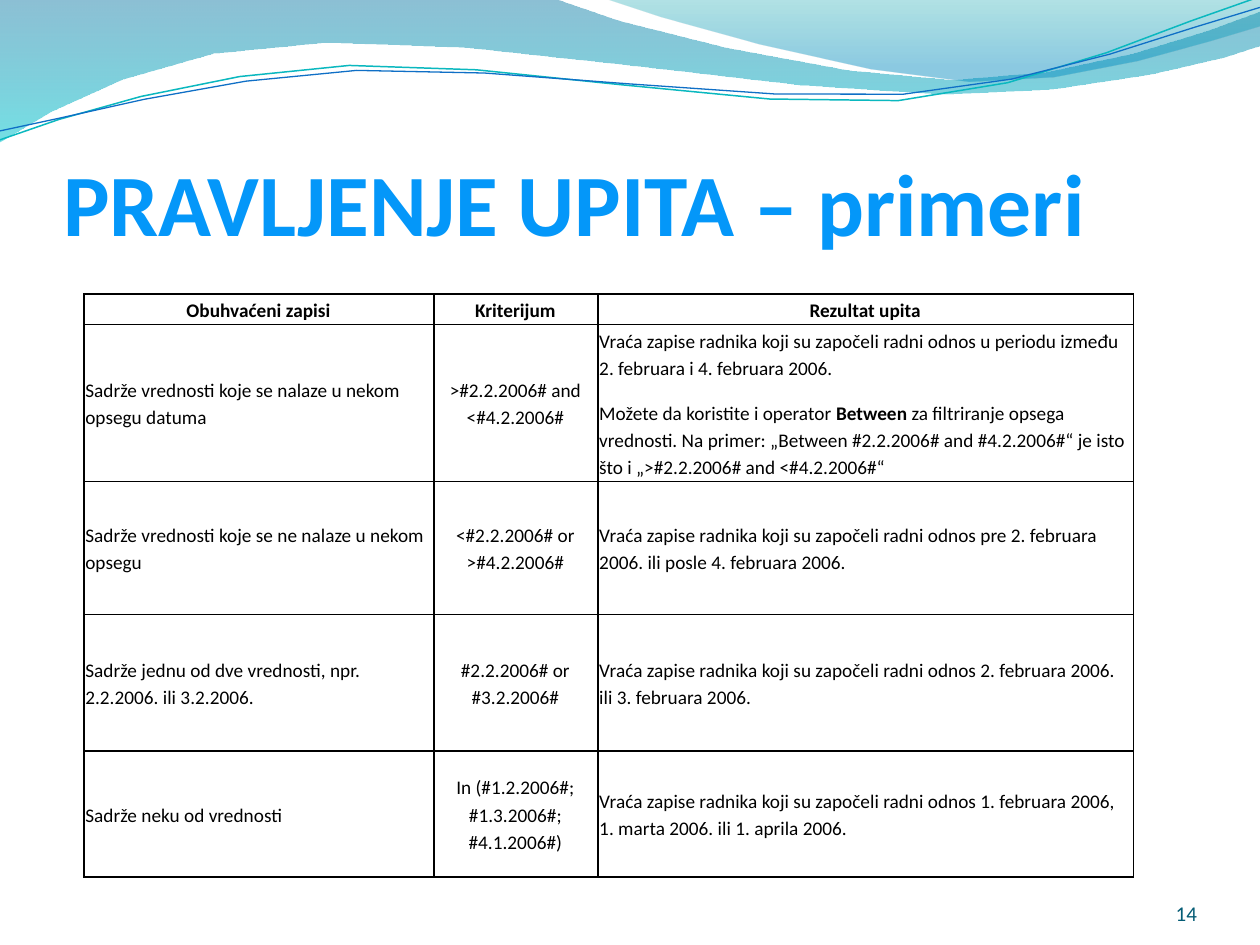
from dataclasses import dataclass

from lxml import etree
from pptx import Presentation
from pptx import util as u
from pptx.dml.color import RGBColor
from pptx.enum import text
from pptx.oxml.ns import qn


@dataclass(frozen=True)
class Theme:
    font: str = "Calibri"
    title_size: float = 50
    cell_size: float = 11
    number_size: float = 12
    title: str = "0497F9"
    body: str = "000000"
    number: str = "045C75"
    teal_line: str = "0AB8BF"
    blue_line: str = "0F6FC6"
    # Gradient stops: position, colour, opacity in percent
    wide_wave: tuple = ((0, "0074A1", 45), (1, "00C6CF", 55))
    right_wave: tuple = ((0, "00A1A9", 30), (0.8, "008BBF", 45))


LEFT, CENTER, RIGHT = text.PP_ALIGN.LEFT, text.PP_ALIGN.CENTER, text.PP_ALIGN.RIGHT

# Outlines in cm: one point is a straight edge, three points are a Bézier curve
WIDE_WAVE = [
    [(-0.03, -0.03)], [(11.18, -0.03)],
    [(12.09, 0.43), (16.87, 1.6), (19.25, 1.6)],
    [(21.67, 1.6), (24.33, 0.66), (25.4, 0.23)],
    [(25.43, 0.91)],
    [(24.97, 1.12), (22.1, 1.93), (18.95, 1.9)],
    [(15.8, 1.9), (9.7, 0.71), (6.53, 0.86)],
    [(3.28, 0.89), (1.17, 2.11), (-0.03, 2.87)],
]
RIGHT_WAVE = [
    [(12.17, -0.03)],
    [(12.93, 0.28), (17.32, 1.57), (19.53, 1.65)],
    [(21.74, 1.75), (24.41, 0.81), (25.4, 0.53)],
    [(25.4, -0.03)],
]
TEAL_CURVE = [
    [(0, 2.82)],
    [(1.22, 2.36), (4.01, 1.45), (7.04, 1.32)],
    [(10.03, 1.19), (15.06, 2.26), (18.11, 2.03)],
    [(21.16, 1.8), (23.83, 0.38), (25.35, -0.05)],
]
BLUE_CURVE = [
    [(0, 2.64)],
    [(1.19, 2.44), (4.17, 1.55), (7.19, 1.42)],
    [(10.24, 1.3), (15.16, 2.11), (18.21, 1.9)],
    [(21.23, 1.7), (23.9, 0.53), (25.4, 0.15)],
]

COLUMN_WIDTHS = [7.06, 3.3, 10.8]
ROW_HEIGHTS = [0.48, 3.07, 2.68, 2.75, 2.54]
# Paragraphs are split at line ends; ** switches bold
QUERY_ROWS = [
    ("Obuhvaćeni zapisi", "Kriterijum", "Rezultat upita"),
    ("Sadrže vrednosti koje se nalaze u nekom opsegu datuma",
     ">#2.2.2006# and <#4.2.2006#",
     "Vraća zapise radnika koji su započeli radni odnos u periodu između "
     "2. februara i 4. februara 2006.\n"
     "Možete da koristite i operator **Between** za filtriranje opsega vrednosti. "
     "Na primer: „Between #2.2.2006# and #4.2.2006#“ je isto što i "
     "„>#2.2.2006# and <#4.2.2006#“"),
    ("Sadrže vrednosti koje se ne nalaze u nekom opsegu",
     "<#2.2.2006# or >#4.2.2006#",
     "Vraća zapise radnika koji su započeli radni odnos pre 2. februara 2006. "
     "ili posle 4. februara 2006."),
    ("Sadrže jednu od dve vrednosti, npr. 2.2.2006. ili 3.2.2006.",
     "#2.2.2006# or #3.2.2006#",
     "Vraća zapise radnika koji su započeli radni odnos 2. februara 2006. "
     "ili 3. februara 2006."),
    ("Sadrže neku od vrednosti",
     "In (#1.2.2006#; #1.3.2006#; #4.1.2006#)",
     "Vraća zapise radnika koji su započeli radni odnos 1. februara 2006, "
     "1. marta 2006. ili 1. aprila 2006."),
]


def write(frame, content, *, font, size, color, bold=False, align=LEFT,
          line_spacing=None, space_after=0):
    """Fill a text frame with formatted paragraphs."""
    lines = content.split("\n")
    for index, line in enumerate(lines):
        paragraph = frame.paragraphs[0] if index == 0 else frame.add_paragraph()
        paragraph.alignment = align
        paragraph.line_spacing = line_spacing
        paragraph.space_before = u.Pt(0)
        is_extra = index > 0 and index == len(lines) - 1
        paragraph.space_after = u.Pt(0 if is_extra else space_after)
        for part, words in enumerate(line.split("**")):
            run = paragraph.add_run()
            run.text = words
            run.font.name, run.font.size = font, u.Pt(size)
            run.font.bold = bold or part % 2 == 1
            run.font.color.rgb = RGBColor.from_string(color)


def trace(outline, steps=4):
    """Turn an outline into points, sampling its curves."""
    points = []
    for segment in outline:
        if len(segment) == 1:
            points += segment
            continue
        controls = [points[-1], *segment]
        for step in range(1, steps + 1):
            t = step / steps
            weights = ((1 - t) ** 3, 3 * t * (1 - t) ** 2, 3 * t * t * (1 - t), t ** 3)
            points.append(tuple(sum(w * point[axis] for w, point in zip(weights, controls))
                                for axis in (0, 1)))
    return [(u.Cm(x), u.Cm(y)) for x, y in points]


class SlideBuilder:
    def __init__(self, slide, theme):
        self.slide, self.theme = slide, theme

    def outline(self, outline, close):
        start, *points = trace(outline)
        builder = self.slide.shapes.build_freeform(*start)
        builder.add_line_segments(points, close=close)
        shape = builder.convert_to_shape()
        shape.shadow.inherit = False
        return shape

    def wave(self, outline, stops):
        shape = self.outline(outline, close=True)
        shape.line.fill.background()
        shape.fill.gradient()
        shape.fill.gradient_angle = 270
        for stop, (position, color, opacity) in zip(shape.fill.gradient_stops, stops):
            stop.position = position
            stop.color.rgb = RGBColor.from_string(color)
        for color, stop in zip(shape.element.iter(qn("a:srgbClr")), stops):
            etree.SubElement(color, qn("a:alpha"), val=str(stop[2] * 1000))

    def curve(self, outline, color, width):
        shape = self.outline(outline, close=False)
        shape.fill.background()
        shape.line.color.rgb = RGBColor.from_string(color)
        shape.line.width = u.Pt(width)

    def place_text(self, shape, box, content, top_inset=0, **style):
        shape.left, shape.top, shape.width, shape.height = map(u.Cm, box)
        frame = shape.text_frame
        frame.word_wrap = True
        frame.auto_size = text.MSO_AUTO_SIZE.NONE
        frame.vertical_anchor = text.MSO_ANCHOR.BOTTOM
        frame.margin_left = frame.margin_right = frame.margin_bottom = 0
        frame.margin_top = u.Cm(top_inset)
        write(frame, content, font=self.theme.font, **style)

    def title(self, content):
        self.place_text(self.slide.shapes.title, (1.27, 1.94, 22.86, 3.18), content,
                        top_inset=0.13, size=self.theme.title_size,
                        color=self.theme.title, bold=True)

    def page_number(self, content):
        shape = self.slide.shapes.add_textbox(0, 0, 0, 0)
        self.place_text(shape, (22.02, 17.65, 2.11, 1.02), content, align=RIGHT,
                        size=self.theme.number_size, color=self.theme.number)

    def border(self, cell):
        properties = cell._tc.get_or_add_tcPr()
        for side in ("lnL", "lnR", "lnT", "lnB"):
            line = etree.SubElement(properties, qn(f"a:{side}"), w=str(u.Pt(1)))
            fill = etree.SubElement(line, qn("a:solidFill"))
            etree.SubElement(fill, qn("a:srgbClr"), val=self.theme.body)

    def table(self, rows, left, top, widths, heights):
        table = self.slide.shapes.add_table(
            len(rows), len(widths), u.Cm(left), u.Cm(top),
            u.Cm(sum(widths)), u.Cm(sum(heights))).table
        table.first_row = table.horz_banding = False
        for column, width in zip(table.columns, widths):
            column.width = u.Cm(width)
        for row, height in zip(table.rows, heights):
            row.height = u.Cm(height)
        for r, row in enumerate(rows):
            for c, content in enumerate(row):
                cell = table.cell(r, c)
                self.border(cell)
                cell.fill.background()
                cell.vertical_anchor = text.MSO_ANCHOR.MIDDLE
                cell.margin_left, cell.margin_right = u.Cm(0.03), u.Cm(0.05)
                cell.margin_top = cell.margin_bottom = u.Cm(0.03)
                write(cell.text_frame, content, font=self.theme.font,
                      size=self.theme.cell_size, color=self.theme.body, bold=r == 0,
                      align=CENTER if r == 0 or c == 1 else LEFT,
                      line_spacing=1.15, space_after=10)


def main():
    presentation = Presentation()
    presentation.slide_width, presentation.slide_height = u.Cm(25.4), u.Cm(19.05)
    theme = Theme()
    title_only = presentation.slide_layouts[5]
    builder = SlideBuilder(presentation.slides.add_slide(title_only), theme)

    # Header waves
    builder.wave(WIDE_WAVE, theme.wide_wave)
    builder.wave(RIGHT_WAVE, theme.right_wave)
    builder.curve(TEAL_CURVE, theme.teal_line, 0.85)
    builder.curve(BLUE_CURVE, theme.blue_line, 0.75)

    # Title, page number and query table
    builder.title("PRAVLJENJE UPITA – primeri")
    builder.page_number("14")
    builder.table(QUERY_ROWS, 1.69, 5.93, COLUMN_WIDTHS, ROW_HEIGHTS)
    presentation.save("out.pptx")


if __name__ == "__main__":
    main()
